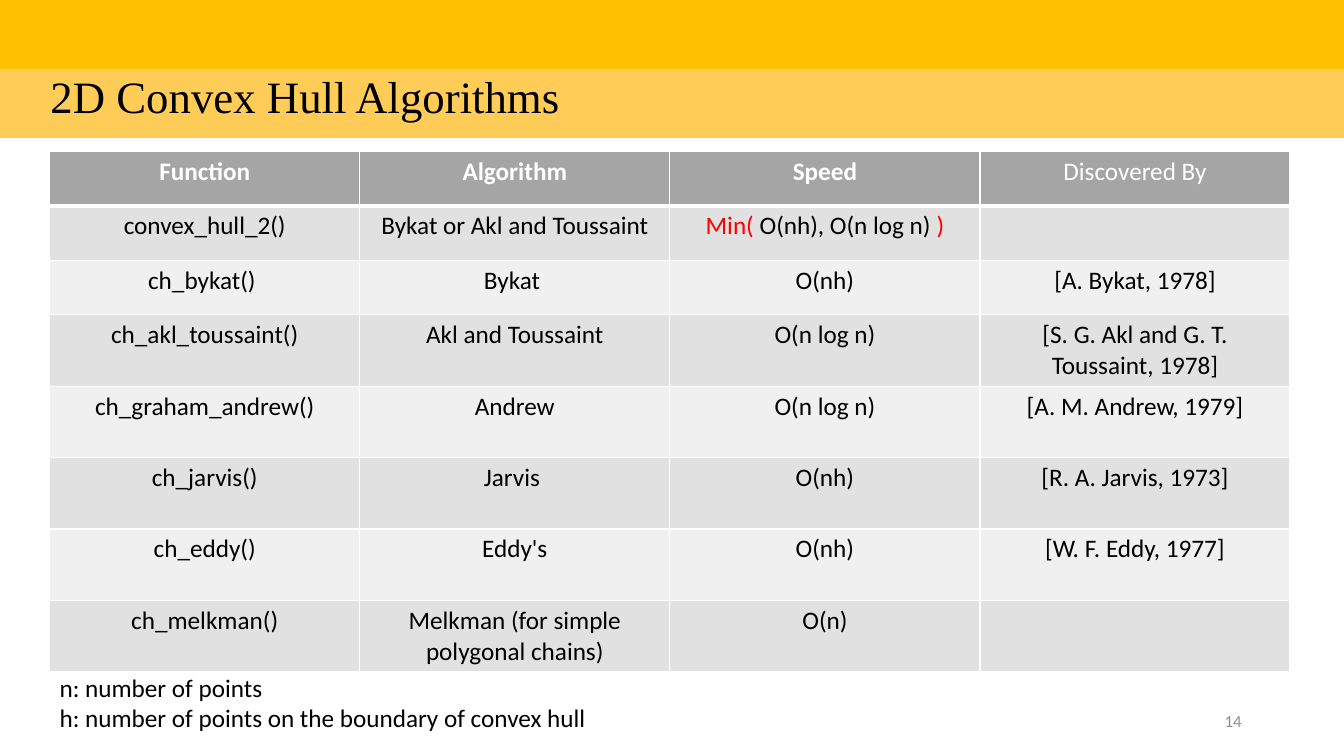
from dataclasses import dataclass
from lxml.etree import SubElement
from pptx import Presentation
from pptx.dml.color import RGBColor
from pptx.enum.text import MSO_ANCHOR, MSO_AUTO_SIZE, PP_ALIGN
from pptx.oxml.ns import qn
from pptx.util import Pt


@dataclass
class Theme:
    sans: str = "Calibri"
    serif: str = "Times New Roman"
    title: int = 32
    body: int = 18
    small: int = 12
    black: str = "000000"
    white: str = "FFFFFF"
    red: str = "FF0000"
    gray: str = "8C8C8C"
    head: str = "A5A5A5"
    odd: str = "E1E1E1"
    even: str = "F0F0F0"
    gold: str = "FFC000"
    pale: str = "FFCC58"


theme = Theme()


def add_run(para, text, size=theme.body, color=theme.black, face=theme.sans, bold=False):
    run = para.add_run()
    run.text = text
    run.font.size = Pt(size)
    run.font.name = face
    run.font.bold = bold
    run.font.color.rgb = RGBColor.from_string(color)


def paint(cell, fill, edges):
    props = cell._tc.get_or_add_tcPr()
    for side, width in edges.items():
        line = SubElement(props, qn("a:ln" + side), w=str(Pt(width)))
        if width:
            ink = SubElement(line, qn("a:solidFill"))
            SubElement(ink, qn("a:srgbClr"), val=theme.white)
        else:
            SubElement(line, qn("a:noFill"))
    cell.fill.solid()
    cell.fill.fore_color.rgb = RGBColor.from_string(fill)


deck = Presentation()
deck.slide_width, deck.slide_height = Pt(960), Pt(540)
slide = deck.slides.add_slide(deck.slide_layouts[6])

rows = [
    ("Function", "Algorithm", "Speed", "Discovered By"),
    ("convex_hull_2()", "Bykat or Akl and Toussaint",
     [("Min( ", theme.red), ("O(nh), O(n log n) ", theme.black), (")", theme.red)], ""),
    ("ch_bykat() ", "Bykat ", "O(nh)", "[A. Bykat, 1978]"),
    ("ch_akl_toussaint()", "Akl and Toussaint", "O(n log n)",
     "[S. G. Akl and G. T. Toussaint, 1978]"),
    ("ch_graham_andrew()", "Andrew", "O(n log n)", "[A. M. Andrew, 1979]"),
    ("ch_jarvis()", "Jarvis ", "O(nh)", "[R. A. Jarvis, 1973]"),
    ("ch_eddy()", "Eddy's", "O(nh)", "[W. F. Eddy, 1977]"),
    ("ch_melkman()", "Melkman (for simple polygonal chains)", "O(n)", ""),
]

grid = slide.shapes.add_table(len(rows), 4, Pt(35.5), Pt(108.3), Pt(886), Pt(371.4)).table
for col in grid.columns:
    col.width = Pt(221.5)
for r, row in enumerate(rows):
    grid.rows[r].height = Pt(38.8 if r < 3 else 51)
    fill = theme.head if r == 0 else theme.odd if r % 2 else theme.even
    edges = {"L": 1, "R": 1, "T": 3 if r == 1 else 1, "B": 3 if r == 0 else 1}
    for c, item in enumerate(row):
        cell = grid.cell(r, c)
        paint(cell, fill, edges)
        para = cell.text_frame.paragraphs[0]
        para.alignment = PP_ALIGN.CENTER
        color = theme.white if r == 0 else theme.black
        parts = [(item, color)] if isinstance(item, str) else item
        for text, tone in parts:
            if text:
                add_run(para, text, color=tone, bold=r == 0 and c < 3)

legend = slide.shapes.add_textbox(Pt(35.5), Pt(476.8), Pt(402), Pt(51)).text_frame
legend.word_wrap = False
legend.auto_size = MSO_AUTO_SIZE.SHAPE_TO_FIT_TEXT
add_run(legend.paragraphs[0], "n: number of points")
add_run(legend.add_paragraph(), "h: number of points on the boundary of convex hull")

number = slide.shapes.add_textbox(Pt(678), Pt(500.5), Pt(216), Pt(28.8)).text_frame
number.word_wrap = True
number.vertical_anchor = MSO_ANCHOR.MIDDLE
number.paragraphs[0].alignment = PP_ALIGN.RIGHT
add_run(number.paragraphs[0], "14", theme.small, theme.gray)

band = slide.shapes.add_table(2, 1, Pt(0), Pt(-0.7), Pt(960), Pt(99.4)).table
band.first_row = False
band.horz_banding = False
for r, fill in enumerate((theme.gold, theme.pale)):
    band.rows[r].height = Pt(49.7)
    paint(band.cell(r, 0), fill, {"L": 0, "R": 0, "T": 0, "B": 0})
title = band.cell(1, 0)
title.margin_left = title.margin_right = Pt(36)
add_run(title.text_frame.paragraphs[0], "2D Convex Hull Algorithms", theme.title, face=theme.serif)

deck.save("out.pptx")
